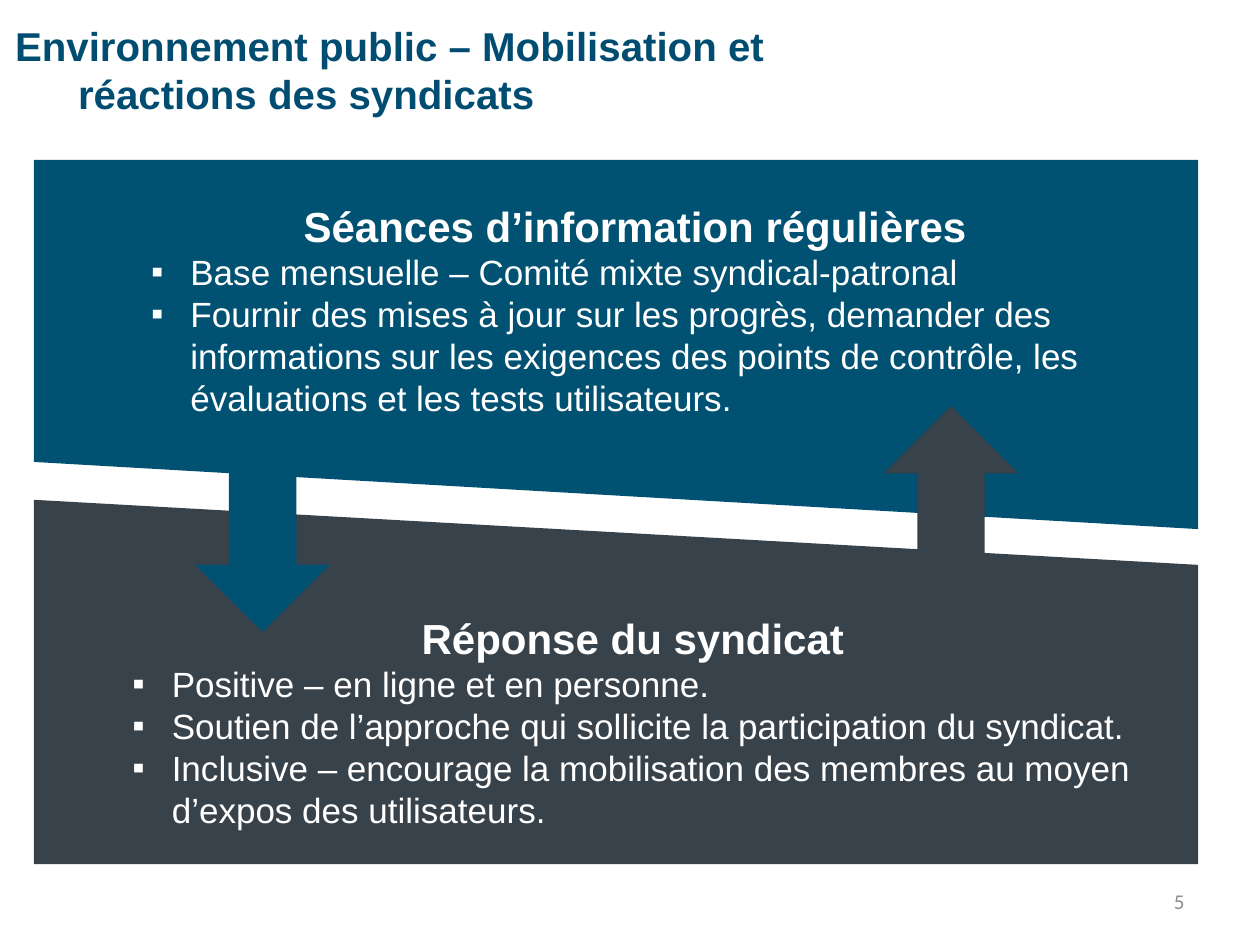
from lxml import etree
from pptx import Presentation
from pptx.dml.color import RGBColor
from pptx.enum.shapes import MSO_SHAPE
from pptx.enum.text import MSO_ANCHOR, PP_ALIGN
from pptx.oxml.ns import qn
from pptx.util import Pt

DOWN_ARROW = MSO_SHAPE.DOWN_ARROW
MIDDLE, TOP = MSO_ANCHOR.MIDDLE, MSO_ANCHOR.TOP
LEFT, CENTER, RIGHT = PP_ALIGN.LEFT, PP_ALIGN.CENTER, PP_ALIGN.RIGHT

BLUE, SLATE, WHITE = "005172", "37424A", "FFFFFF"
TITLE_BLUE, NUMBER_GRAY = "004D71", "8C8C8C"
PANEL_LEFT, PANEL_RIGHT = 19.4, 684.7
ARROW_WIDTH, ARROW_HEIGHT = 77, 118.8


def color(value):
    return RGBColor.from_string(value)


def write(paragraph, text, *, size, fill=WHITE, font="Arial", bold=False,
          align=LEFT, indent=0, bullet=None):
    properties = paragraph._p.get_or_add_pPr()
    if indent:
        properties.set("marL", str(Pt(indent)))
        properties.set("indent", str(-Pt(indent)))
    if bullet:
        etree.SubElement(properties, qn("a:buFont")).set("typeface", "Arial")
        etree.SubElement(properties, qn("a:buChar")).set("char", bullet)
    paragraph.alignment = align
    run = paragraph.add_run()
    run.text = text
    run.font.name = font
    run.font.size = Pt(size)
    run.font.bold = bold
    run.font.color.rgb = color(fill)


class SlideBuilder:
    def __init__(self, slide):
        self.slide = slide

    def paint(self, shape, fill):
        shape.shadow.inherit = False
        shape.fill.solid()
        shape.fill.fore_color.rgb = color(fill)
        shape.line.fill.background()

    def panel(self, points, fill):
        start, *others = [(Pt(x), Pt(y)) for x, y in points]
        builder = self.slide.shapes.build_freeform(*start)
        builder.add_line_segments(others, close=True)
        self.paint(builder.convert_to_shape(), fill)

    def arrow(self, left, top, fill, rotation=0):
        shape = self.slide.shapes.add_shape(
            DOWN_ARROW, Pt(left), Pt(top), Pt(ARROW_WIDTH), Pt(ARROW_HEIGHT))
        shape.rotation = rotation
        self.paint(shape, fill)

    def text_frame(self, left, top, width, height, anchor=TOP):
        box = self.slide.shapes.add_textbox(Pt(left), Pt(top), Pt(width), Pt(height))
        frame = box.text_frame
        frame.word_wrap = True
        frame.vertical_anchor = anchor
        return frame

    def title(self, text):
        frame = self.text_frame(8.6, 5, 519.1, 69.1, MIDDLE)
        frame.margin_left = frame.margin_right = 0
        frame.margin_top = frame.margin_bottom = 0
        write(frame.paragraphs[0], text, size=23, fill=TITLE_BLUE, bold=True, indent=36)

    def number(self, text):
        frame = self.text_frame(516.2, 500.4, 167.8, 28.8, MIDDLE)
        write(frame.paragraphs[0], text, size=12, fill=NUMBER_GRAY,
              font="Calibri", align=RIGHT)

    def bullet_list(self, left, top, width, heading, items):
        frame = self.text_frame(left, top, width, 129.6)
        write(frame.paragraphs[0], heading, size=24, bold=True, align=CENTER)
        for item in items:
            write(frame.add_paragraph(), item, size=20, indent=22.5, bullet="▪")


def main():
    presentation = Presentation()
    presentation.slide_width, presentation.slide_height = Pt(720), Pt(540)
    builder = SlideBuilder(presentation.slides.add_slide(presentation.slide_layouts[6]))

    builder.number("5")
    builder.title("Environnement public – Mobilisation et réactions des syndicats")
    builder.panel([(PANEL_LEFT, 91.4), (PANEL_RIGHT, 91.4),
                   (PANEL_RIGHT, 302.4), (PANEL_LEFT, 264)], BLUE)
    builder.arrow(504.9, 232, SLATE, rotation=180)
    builder.panel([(PANEL_LEFT, 285.6), (PANEL_RIGHT, 322.8),
                   (PANEL_RIGHT, 493.8), (PANEL_LEFT, 493.8)], SLATE)
    builder.arrow(111.6, 242.4, BLUE)
    builder.bullet_list(79.2, 110.9, 567.4, "Séances d’information régulières", [
        "Base mensuelle – Comité mixte syndical-patronal",
        "Fournir des mises à jour sur les progrès, demander des informations sur "
        "les exigences des points de contrôle, les évaluations et les tests utilisateurs.",
    ])
    builder.bullet_list(68.6, 346.3, 586.1, "Réponse du syndicat", [
        "Positive – en ligne et en personne.",
        "Soutien de l’approche qui sollicite la participation du syndicat.",
        "Inclusive – encourage la mobilisation des membres au moyen "
        "d’expos des utilisateurs.",
    ])
    presentation.save("out.pptx")


if __name__ == "__main__":
    main()
